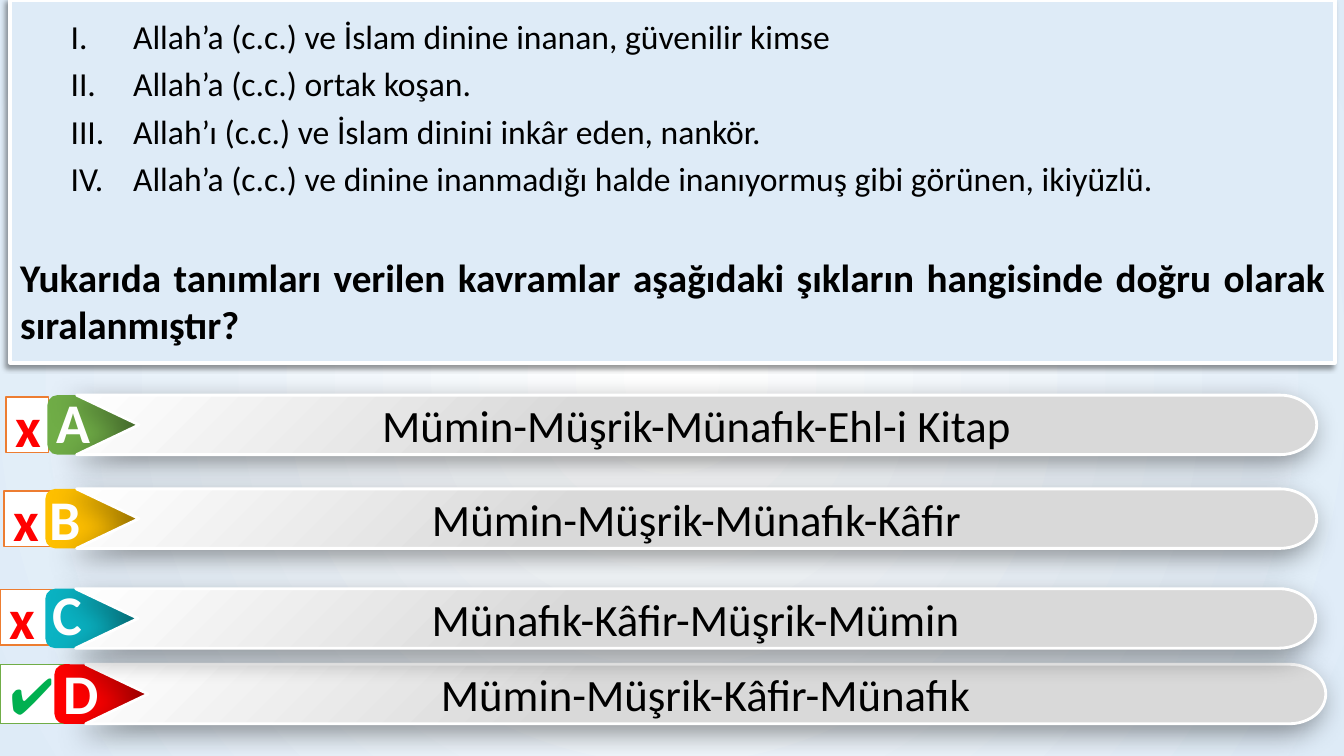
from dataclasses import dataclass
from math import cos, pi, sin

from lxml import etree
from pptx import Presentation
from pptx.dml.color import RGBColor
from pptx.enum.shapes import MSO_SHAPE
from pptx.enum.text import MSO_ANCHOR, MSO_AUTO_SIZE, PP_ALIGN
from pptx.oxml import parse_xml
from pptx.oxml.ns import qn
from pptx.util import Inches, Pt

RECT, ROUND = MSO_SHAPE.RECTANGLE, MSO_SHAPE.ROUNDED_RECTANGLE
TOP, MIDDLE = MSO_ANCHOR.TOP, MSO_ANCHOR.MIDDLE
NO_FIT = MSO_AUTO_SIZE.NONE
LEFT, CENTER, JUSTIFY = PP_ALIGN.LEFT, PP_ALIGN.CENTER, PP_ALIGN.JUSTIFY

WHITE = RGBColor(0xFF, 0xFF, 0xFF)
OFF_WHITE = RGBColor(0xFE, 0xFE, 0xFE)
BLACK = RGBColor(0, 0, 0)
PALE_BLUE = RGBColor(0xDE, 0xEB, 0xF7)
GRAY = RGBColor(0xD9, 0xD9, 0xD9)
GREEN = RGBColor(0x70, 0xAD, 0x47)
TICK_GREEN = RGBColor(0, 0xB0, 0x50)
ORANGE = RGBColor(0xED, 0x7D, 0x31)
RED = RGBColor(0xFF, 0, 0)
YELLOW = RGBColor(0xFF, 0xC0, 0)
TEAL = RGBColor(0x0A, 0xB3, 0xC3)

FONT = "Calibri"
A_NS = "http://schemas.openxmlformats.org/drawingml/2006/main"
SLIDE_W, SLIDE_H = 13.33, 7.5
BAR_W, BAR_H = 12.3, 0.59

DEFINITIONS = [
    "Allah’a (c.c.) ve İslam dinine inanan, güvenilir kimse",
    "Allah’a (c.c.) ortak koşan.",
    "Allah’ı (c.c.) ve İslam dinini inkâr eden, nankör.",
    "Allah’a (c.c.) ve dinine inanmadığı halde inanıyormuş gibi görünen, ikiyüzlü.",
]
QUESTION = ("Yukarıda tanımları verilen kavramlar aşağıdaki şıkların "
            "hangisinde doğru olarak sıralanmıştır?")


@dataclass
class Answer:
    letter: str
    words: str
    color: RGBColor
    bar: tuple
    tag_left: float
    letter_at: tuple
    badge: tuple
    correct: bool = False


ANSWERS = [
    Answer("A", "Mümin-Müşrik-Münafık-Ehl-i Kitap", GREEN, (0.76, 3.92), 0.47,
           (0.33, 3.8), (0.06, 3.94, 0.42, 0.55)),
    Answer("D", "Mümin-Müşrik-Kâfir-Münafık", RED, (0.85, 6.59), 0.54,
           (0.41, 6.48), (0, 6.59, 0.64, 0.59), True),
    Answer("B", "Mümin-Müşrik-Münafık-Kâfir", YELLOW, (0.76, 4.85), 0.45,
           (0.25, 4.76), (0.04, 4.87, 0.55, 0.55)),
    Answer("C", "Münafık-Kâfir-Müşrik-Mümin", TEAL, (0.75, 5.84), 0.45,
           (0.27, 5.7), (0, 5.85, 0.55, 0.55)),
]


def inches(box):
    return [Inches(length) for length in box]


def gradient(stops, direction):
    stop_xml = "".join(f'<a:gs pos="{share * 1000}"><a:srgbClr val="{color}"/></a:gs>'
                       for share, color in stops)
    return parse_xml(f'<a:gradFill xmlns:a="{A_NS}" rotWithShape="1">'
                     f'<a:gsLst>{stop_xml}</a:gsLst>{direction}</a:gradFill>')


def replace_fill(properties, fill):
    properties.replace(properties.find(qn("a:solidFill")), fill)


def paint(shape, fill, line=None, width=1):
    shape.fill.solid()
    shape.fill.fore_color.rgb = fill
    if line is None:
        shape.line.fill.background()
    else:
        shape.line.color.rgb = line
        shape.line.width = Pt(width)


def cast_shadow(shape, opacity, blur, distance):
    shape._element.spPr.append(parse_xml(
        f'<a:effectLst xmlns:a="{A_NS}"><a:outerShdw blurRad="{Pt(blur)}" '
        f'dist="{Pt(distance)}" dir="{135 * 60000}" algn="tr" rotWithShape="0">'
        f'<a:srgbClr val="{BLACK}"><a:alpha val="{opacity * 1000}"/></a:srgbClr>'
        '</a:outerShdw></a:effectLst>'))


def write(paragraph, text, size, color=BLACK, bold=False, align=LEFT, before=0,
          numbered=False, outlined=False):
    properties = paragraph._p.get_or_add_pPr()
    properties.set("marL", str(Inches(1.12 if numbered else 0)))
    properties.set("indent", str(Inches(-0.62 if numbered else 0)))
    if numbered:
        etree.SubElement(properties, qn("a:buFont"), typeface="+mj-lt")
        etree.SubElement(properties, qn("a:buAutoNum"), type="romanUcPeriod")
    else:
        etree.SubElement(properties, qn("a:buNone"))
    paragraph.alignment = align
    paragraph.space_before = Pt(before)
    run = paragraph.add_run()
    run.text = text
    font = run.font
    font.name, font.size, font.bold = FONT, Pt(size), bold
    font.color.rgb = color
    if outlined:
        run_format = run._r.get_or_add_rPr()
        run_format.set("spc", "50")
        run_format.insert(0, parse_xml(
            f'<a:ln xmlns:a="{A_NS}" w="{Pt(0.75)}"><a:solidFill>'
            f'<a:srgbClr val="{WHITE}"/></a:solidFill></a:ln>'))


def label(shape, text, size, anchor=MIDDLE, **text_format):
    frame = shape.text_frame
    frame.word_wrap = True
    frame.vertical_anchor = anchor
    write(frame.paragraphs[0], text, size, **text_format)


def add_background(slide):
    slide.background.fill.solid()
    center = '<a:path path="circle"><a:fillToRect l="50000" t="50000" r="50000" b="50000"/></a:path>'
    replace_fill(slide.background._cSld.bg.bgPr,
                 gradient([(0, WHITE), (100, PALE_BLUE)], center))


def add_question(slide, box):
    panel = slide.placeholders[1]
    panel.left, panel.top, panel.width, panel.height = inches(box)
    paint(panel, PALE_BLUE, WHITE, 2.5)
    cast_shadow(panel, 40, 4, 3)
    frame = panel.text_frame
    frame.word_wrap = True
    frame.auto_size = NO_FIT
    frame.vertical_anchor = MIDDLE
    for number, definition in enumerate(DEFINITIONS):
        paragraph = frame.add_paragraph() if number else frame.paragraphs[0]
        write(paragraph, definition, 24, align=JUSTIFY, before=5 if number else 0,
              numbered=True)
    write(frame.add_paragraph(), QUESTION, 28, bold=True, align=JUSTIFY, before=39)


def add_badge(slide, answer):
    badge = slide.shapes.add_shape(RECT, *inches(answer.badge))
    badge.shadow.inherit = False
    paint(badge, WHITE, GREEN if answer.correct else ORANGE)
    if answer.correct:
        label(badge, "✔", 36, color=TICK_GREEN)
    else:
        label(badge, "x", 40, color=RED, bold=True)


def add_bar(slide, left, top, width, height):
    middle = top + height / 2
    cap = 0.36
    angles = [pi * step / 24 - pi / 2 for step in range(25)]
    outline = [(left + width - cap + cap * cos(angle), middle + height / 2 * sin(angle))
               for angle in angles]
    outline += [(left, top + height), (left + 0.62, middle)]
    builder = slide.shapes.build_freeform(Inches(left), Inches(top))
    builder.add_line_segments([inches(point) for point in outline], close=True)
    bar = builder.convert_to_shape()
    paint(bar, GRAY, WHITE, 2)
    replace_fill(bar._element.spPr,
                 gradient([(0, WHITE), (40, GRAY), (100, GRAY)],
                          '<a:lin ang="2700000" scaled="0"/>'))
    cast_shadow(bar, 40, 20, 7)
    return bar


def add_answer(slide, answer):
    left, top = answer.bar
    tag = slide.shapes.add_shape(ROUND, *inches((answer.tag_left, top, 1.31, BAR_H)))
    tag.shadow.inherit = False
    paint(tag, answer.color)
    bar = add_bar(slide, left, top, BAR_W, BAR_H)
    label(bar, answer.words, 32, align=CENTER)
    letter = slide.shapes.add_textbox(*inches((*answer.letter_at, 0.79, 0.77)))
    label(letter, answer.letter, 40, anchor=TOP, color=OFF_WHITE, bold=True,
          align=CENTER, outlined=True)


def main():
    deck = Presentation()
    deck.slide_width, deck.slide_height = inches((SLIDE_W, SLIDE_H))
    slide = deck.slides.add_slide(deck.slide_layouts[1])
    empty_title = slide.shapes.title._element
    empty_title.getparent().remove(empty_title)
    add_background(slide)
    for answer in ANSWERS:
        add_badge(slide, answer)
    add_question(slide, (0.1, 0, 13.14, 3.6))
    for answer in ANSWERS:
        add_answer(slide, answer)
    deck.save("out.pptx")


if __name__ == "__main__":
    main()
